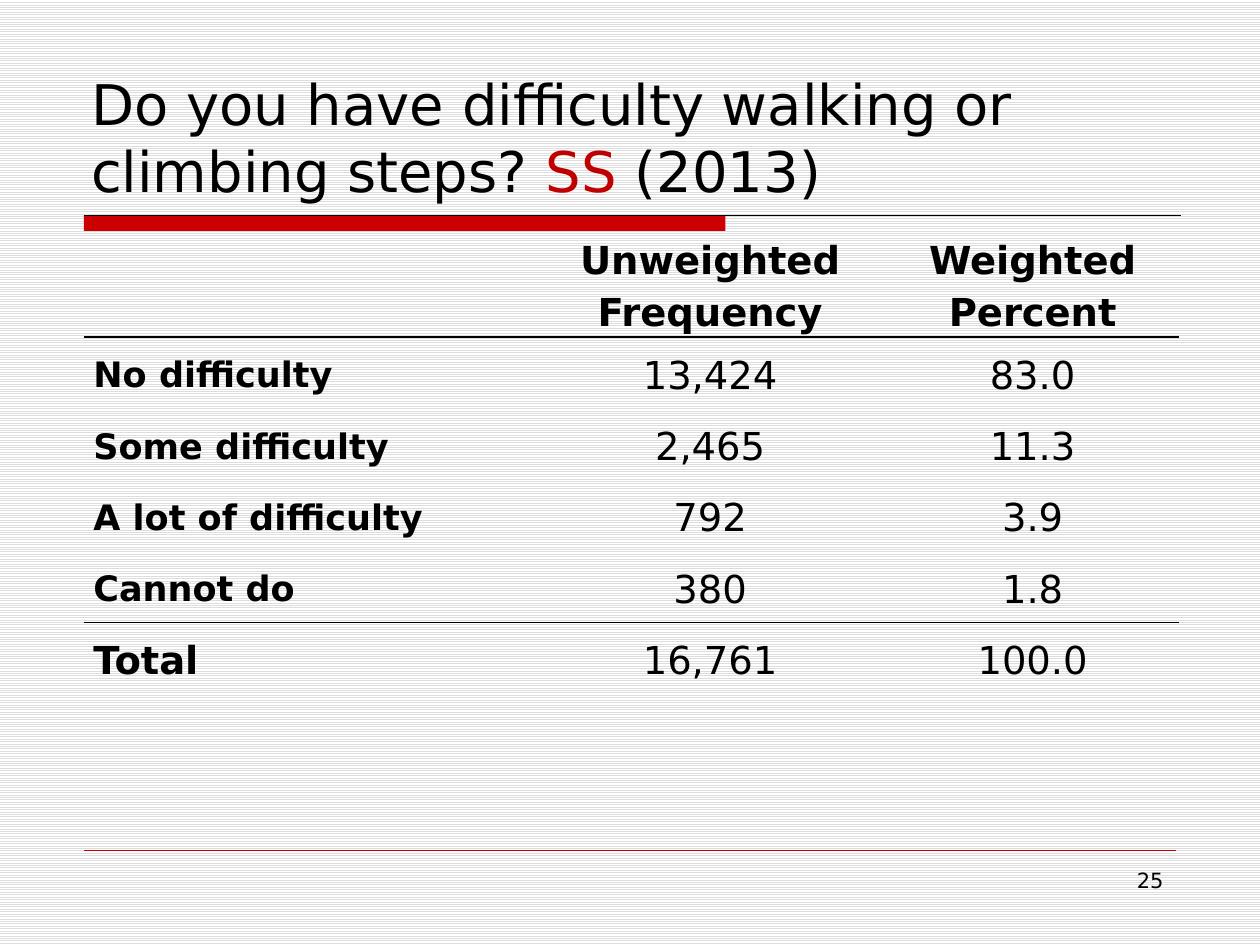
from lxml.etree import SubElement
from pptx import Presentation
from pptx.dml.color import RGBColor
from pptx.enum.dml import MSO_PATTERN
from pptx.enum.shapes import MSO_CONNECTOR, MSO_SHAPE
from pptx.enum.text import MSO_ANCHOR, PP_ALIGN
from pptx.oxml import parse_xml
from pptx.oxml.ns import nsdecls, qn
from pptx.util import Pt

FONT = "DejaVu Sans"
BLACK, RED, DARK_RED = "000000", "CC0000", "C00000"
LEFT = 48
RULE_TOP = 123
TABLE_TOP = 131.76
COLUMN_WIDTHS = [257, 201.6, 167]
HEADER_HEIGHT, ROW_HEIGHT = 60.5, 40.8
NO_STYLE = "{2D5ABB26-0587-4C30-8999-92F81FD0307C}"
ROWS = [
    ["", "Unweighted\nFrequency", "Weighted Percent"],
    ["No difficulty", "13,424", "83.0"],
    ["Some difficulty", "2,465", "11.3"],
    ["A lot of difficulty", "792", "3.9"],
    ["Cannot do", "380", "1.8"],
    ["Total", "16,761", "100.0"],
]
UNDERLINED_ROWS = (0, 4)


def color(hex_string):
    return RGBColor.from_string(hex_string)


def set_font(font, size, hex_string=BLACK, bold=False):
    font.name, font.size, font.bold = FONT, Pt(size), bold
    font.color.rgb = color(hex_string)


def set_background(slide):
    fill = slide.background.fill
    fill.patterned()
    fill.pattern = MSO_PATTERN.LIGHT_HORIZONTAL
    fill.fore_color.rgb = color("DDDDDD")
    fill.back_color.rgb = color("FFFFFF")


def add_bar(slide, left, top, width, height, hex_string):
    bar = slide.shapes.add_shape(
        MSO_SHAPE.RECTANGLE, Pt(left), Pt(top), Pt(width), Pt(height))
    bar.shadow.inherit = False
    bar.fill.solid()
    bar.fill.fore_color.rgb = color(hex_string)
    bar.line.fill.background()


def add_rule(slide, left, right, top, hex_string, width):
    rule = slide.shapes.add_connector(
        MSO_CONNECTOR.STRAIGHT, Pt(left), Pt(top), Pt(right), Pt(top))
    rule.line.color.rgb = color(hex_string)
    rule.line.width = Pt(width)
    SubElement(rule._element.spPr, qn("a:effectLst"))


def add_text(slide, left, top, width, height, runs, size,
             anchor=MSO_ANCHOR.TOP, alignment=PP_ALIGN.LEFT):
    """Add one paragraph made of (text, colour) runs."""
    frame = slide.shapes.add_textbox(
        Pt(left), Pt(top), Pt(width), Pt(height)).text_frame
    frame.word_wrap = True
    frame.vertical_anchor = anchor
    paragraph = frame.paragraphs[0]
    paragraph.alignment = alignment
    for text, hex_string in runs:
        run = paragraph.add_run()
        run.text = text
        set_font(run.font, size, hex_string)


def add_bottom_border(cell):
    cell._tc.get_or_add_tcPr().insert(0, parse_xml(
        f'<a:lnB {nsdecls("a")} w="12700"><a:solidFill>'
        f'<a:srgbClr val="{BLACK}"/></a:solidFill></a:lnB>'))


def fill_cell(cell, text, size, bold, alignment):
    cell.fill.background()
    cell.vertical_anchor = MSO_ANCHOR.MIDDLE
    cell.margin_left = cell.margin_right = Pt(5.4)
    cell.margin_top = cell.margin_bottom = 0
    cell.text = text
    for paragraph in cell.text_frame.paragraphs:
        paragraph.alignment = alignment
        paragraph.line_spacing = 1.15
        set_font(paragraph.font, size, bold=bold)


def add_frequency_table(slide):
    heights = [HEADER_HEIGHT] + [ROW_HEIGHT] * (len(ROWS) - 1)
    table = slide.shapes.add_table(
        len(ROWS), len(COLUMN_WIDTHS), Pt(LEFT), Pt(TABLE_TOP),
        Pt(sum(COLUMN_WIDTHS)), Pt(sum(heights))).table
    table.first_row = table.horz_banding = False
    table._tbl.tblPr.find(qn("a:tableStyleId")).text = NO_STYLE
    for column, width in zip(table.columns, COLUMN_WIDTHS):
        column.width = Pt(width)
    for row_index, texts in enumerate(ROWS):
        table.rows[row_index].height = Pt(heights[row_index])
        for column_index, text in enumerate(texts):
            cell = table.cell(row_index, column_index)
            is_label = column_index == 0
            size = 20 if is_label and text != "Total" else 22
            fill_cell(cell, text, size, is_label or row_index == 0,
                      PP_ALIGN.LEFT if is_label else PP_ALIGN.CENTER)
            if row_index in UNDERLINED_ROWS:
                add_bottom_border(cell)


def main():
    presentation = Presentation()
    presentation.slide_width, presentation.slide_height = Pt(720), Pt(540)
    slide = presentation.slides.add_slide(presentation.slide_layouts[6])
    set_background(slide)
    add_bar(slide, LEFT, RULE_TOP, 366.5, 9, RED)
    add_rule(slide, LEFT, 674.75, RULE_TOP, BLACK, 0.25)
    add_rule(slide, LEFT, 672, 486, RED, 0.25)
    add_text(slide, 45, 24, 630, 96,
             [("Do you have difficulty walking or climbing steps? ", BLACK),
              ("SS", DARK_RED), (" (2013)", BLACK)], 32, MSO_ANCHOR.BOTTOM)
    add_text(slide, 516, 492, 156, 37.5, [("25", BLACK)], 12,
             alignment=PP_ALIGN.RIGHT)
    add_frequency_table(slide)
    presentation.save("out.pptx")


if __name__ == "__main__":
    main()
